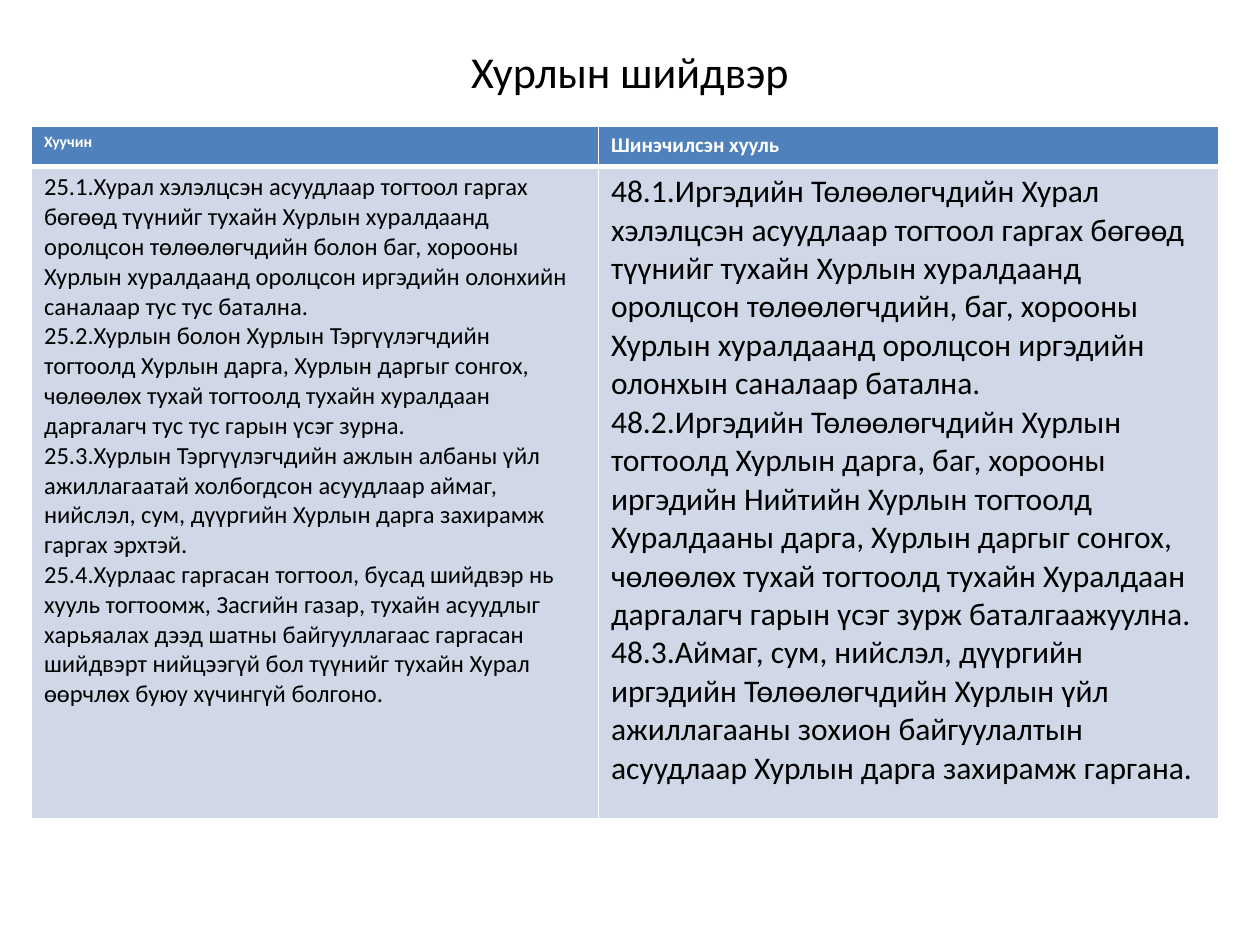
"""Build a slide comparing the old and the revised law on council decisions."""
from lxml import etree
from pptx import Presentation
from pptx.dml.color import RGBColor
from pptx.enum import text
from pptx.oxml import ns
from pptx.util import Inches, Pt

FONT = "Calibri"
BLACK = RGBColor(0x00, 0x00, 0x00)
WHITE = RGBColor(0xFF, 0xFF, 0xFF)
HEADER_BLUE = RGBColor(0x4F, 0x81, 0xBD)
BODY_BLUE = RGBColor(0xD0, 0xD8, 0xE8)

TITLE = "Хурлын шийдвэр"
HEADERS = [("Хуучин", 9), ("Шинэчилсэн хууль", 12)]
OLD_LAW = [
    "25.1.Хурал хэлэлцсэн асуудлаар тогтоол гаргах бөгөөд түүнийг тухайн Хурлын "
    "хуралдаанд оролцсон төлөөлөгчдийн болон баг, хорооны Хурлын хуралдаанд "
    "оролцсон иргэдийн олонхийн саналаар тус тус батална.",
    "25.2.Хурлын болон Хурлын Тэргүүлэгчдийн тогтоолд Хурлын дарга, Хурлын даргыг "
    "сонгох, чөлөөлөх тухай тогтоолд тухайн хуралдаан даргалагч тус тус гарын "
    "үсэг зурна.",
    "25.3.Хурлын Тэргүүлэгчдийн ажлын албаны үйл ажиллагаатай холбогдсон асуудлаар "
    "аймаг, нийслэл, сум, дүүргийн Хурлын дарга захирамж гаргах эрхтэй.",
    "25.4.Хурлаас гаргасан тогтоол, бусад шийдвэр нь хууль тогтоомж, Засгийн газар, "
    "тухайн асуудлыг харьяалах дээд шатны байгууллагаас гаргасан шийдвэрт "
    "нийцээгүй бол түүнийг тухайн Хурал өөрчлөх буюу хүчингүй болгоно.",
]
NEW_LAW = [
    "48.1.Иргэдийн Төлөөлөгчдийн Хурал хэлэлцсэн асуудлаар тогтоол гаргах бөгөөд "
    "түүнийг тухайн Хурлын хуралдаанд оролцсон төлөөлөгчдийн, баг, хорооны Хурлын "
    "хуралдаанд оролцсон иргэдийн олонхын саналаар батална.",
    "48.2.Иргэдийн Төлөөлөгчдийн Хурлын тогтоолд Хурлын дарга, баг, хорооны "
    "иргэдийн Нийтийн Хурлын тогтоолд Хуралдааны дарга, Хурлын даргыг сонгох, "
    "чөлөөлөх тухай тогтоолд тухайн Хуралдаан даргалагч гарын үсэг зурж "
    "баталгаажуулна.",
    "48.3.Аймаг, сум, нийслэл, дүүргийн иргэдийн Төлөөлөгчдийн Хурлын үйл "
    "ажиллагааны зохион байгуулалтын асуудлаар Хурлын дарга захирамж гаргана.",
]


def write_paragraphs(frame, paragraphs, size, color, bold=False, align=text.PP_ALIGN.LEFT):
    """Fill a text frame with one run per paragraph."""
    for index, content in enumerate(paragraphs):
        paragraph = frame.add_paragraph() if index else frame.paragraphs[0]
        paragraph.alignment = align
        run = paragraph.add_run()
        run.text = content
        run.font.name = FONT
        run.font.size = Pt(size)
        run.font.bold = bold
        run.font.color.rgb = color


def set_borders(cell, top, bottom):
    """Give a cell white borders, with top and bottom widths in points."""
    properties = cell._tc.get_or_add_tcPr()
    widths = {"a:lnL": 1, "a:lnR": 1, "a:lnT": top, "a:lnB": bottom}
    for index, (tag, width) in enumerate(widths.items()):
        line = etree.Element(ns.qn(tag), w=str(Pt(width)))
        fill = etree.SubElement(line, ns.qn("a:solidFill"))
        etree.SubElement(fill, ns.qn("a:srgbClr"), val=str(WHITE))
        properties.insert(index, line)


def fill_cell(cell, paragraphs, size, is_header):
    """Write and style one header or body cell."""
    cell.fill.solid()
    cell.fill.fore_color.rgb = HEADER_BLUE if is_header else BODY_BLUE
    set_borders(cell, top=1 if is_header else 3, bottom=3 if is_header else 1)
    color = WHITE if is_header else BLACK
    write_paragraphs(cell.text_frame, paragraphs, size, color, bold=is_header)


def add_title(slide):
    """Add the centred slide title."""
    box = slide.shapes.add_textbox(Inches(0.5), Inches(0.3), Inches(9), Inches(0.53))
    frame = box.text_frame
    frame.word_wrap = True
    frame.vertical_anchor = text.MSO_ANCHOR.MIDDLE
    write_paragraphs(frame, [TITLE], 25.2, BLACK, align=text.PP_ALIGN.CENTER)


def add_law_table(slide):
    """Add the two-column table of old and revised articles."""
    table = slide.shapes.add_table(
        2, 2, Inches(0.25), Inches(1), Inches(9.42), Inches(5.5)).table
    for column, width in zip(table.columns, (4.5, 4.92)):
        column.width = Inches(width)
    for row, height in zip(table.rows, (0.32, 5.18)):
        row.height = Inches(height)
    for index, (header, size) in enumerate(HEADERS):
        fill_cell(table.cell(0, index), [header], size, is_header=True)
    for index, (articles, size) in enumerate([(OLD_LAW, 14), (NEW_LAW, 18)]):
        fill_cell(table.cell(1, index), articles, size, is_header=False)


def main():
    """Create and save the presentation."""
    presentation = Presentation()
    presentation.slide_width = Inches(10)
    presentation.slide_height = Inches(7.5)
    slide = presentation.slides.add_slide(presentation.slide_layouts[6])
    add_title(slide)
    add_law_table(slide)
    presentation.save("out.pptx")


if __name__ == "__main__":
    main()
